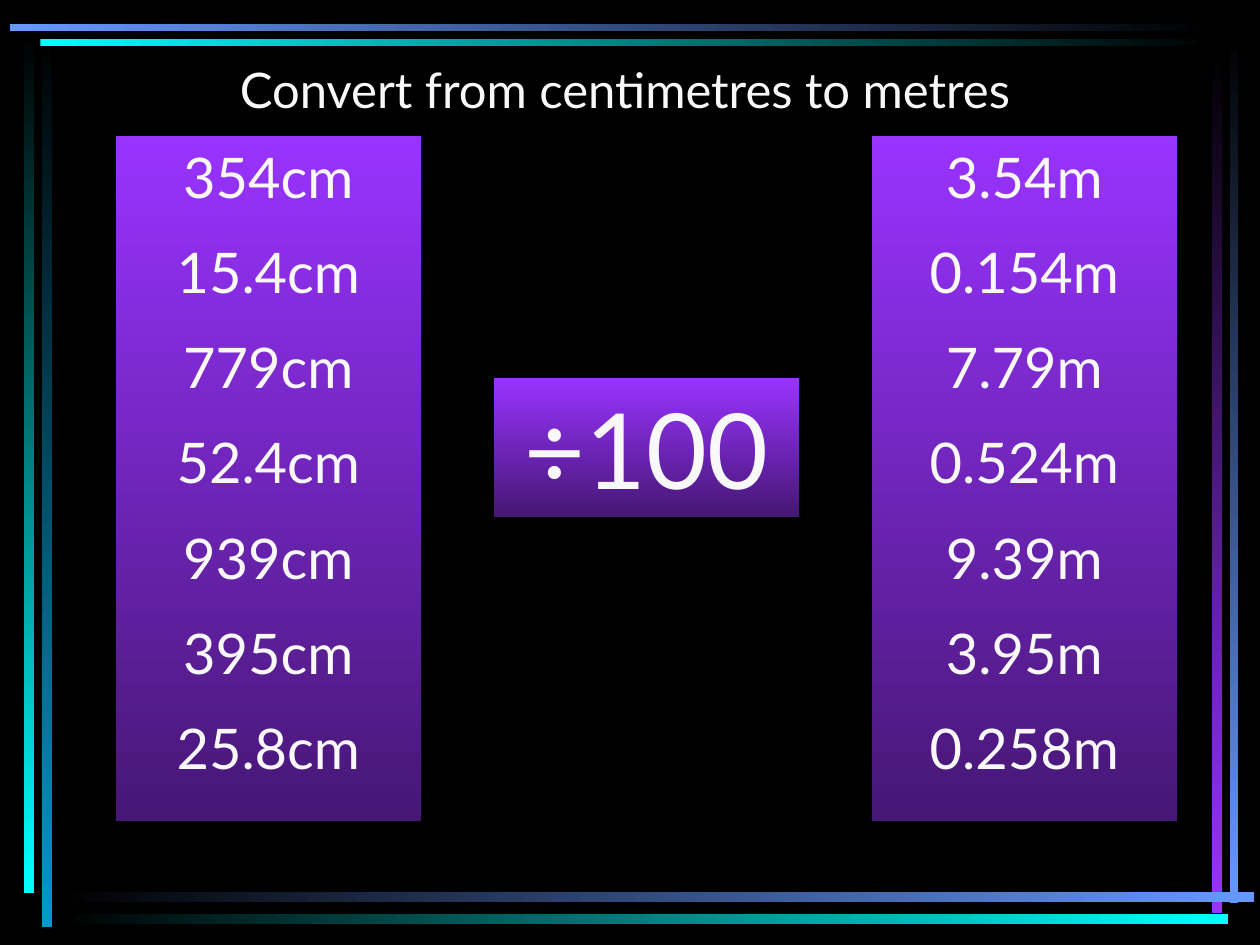
from pptx import Presentation
from pptx.dml.color import RGBColor
from pptx.enum.shapes import MSO_SHAPE
from pptx.enum.text import MSO_ANCHOR, PP_ALIGN
from pptx.util import Inches, Pt

RECT = MSO_SHAPE.RECTANGLE
TOP = MSO_ANCHOR.TOP
CENTER = PP_ALIGN.CENTER
ACROSS, DOWN = 0, 270
BLACK, CYAN, BLUE, TEAL = "000000", "00FFFF", "6699FF", "0099CC"
PURPLE, DEEP_PURPLE, WHITE = "9933FF", "461775", "F8F8F8"


def rgb(value):
    return RGBColor.from_string(value)


class Deck:
    font = "Lato"

    def __init__(self, prs):
        self.s = prs.slides.add_slide(prs.slide_layouts[6])

    def background(self, color):
        fill = self.s.background.fill
        fill.solid()
        fill.fore_color.rgb = rgb(color)

    def gradient(self, box, start, end, angle):
        sp = self.s.shapes.add_shape(RECT, *map(Inches, box))
        sp.shadow.inherit = False
        sp.line.fill.background()
        sp.fill.gradient()
        sp.fill.gradient_angle = angle
        for stop, position, color in zip(sp.fill.gradient_stops, (0, 1), (start, end)):
            stop.position = position
            stop.color.rgb = rgb(color)
        return sp

    def add_lines(self, sp, lines, size):
        tf = sp.text_frame
        tf.word_wrap = True
        tf.vertical_anchor = TOP
        for i, line in enumerate(lines):
            p = tf.paragraphs[0] if i == 0 else tf.add_paragraph()
            p.alignment = CENTER
            p.space_before = Pt(size / 2 if i else 0)
            r = p.add_run()
            r.text = line
            r.font.name = self.font
            r.font.size = Pt(size)
            r.font.color.rgb = rgb(WHITE)

    def panel(self, box, lines, size):
        self.add_lines(self.gradient(box, PURPLE, DEEP_PURPLE, DOWN), lines, size)

    def text(self, box, line, size):
        self.add_lines(self.s.shapes.add_textbox(*map(Inches, box)), [line], size)


def main():
    prs = Presentation()
    prs.slide_width, prs.slide_height = Inches(10), Inches(7.5)
    deck = Deck(prs)
    deck.background(BLACK)

    frame_bars = [
        ((0.33, 0.28, 0.08, 7.08), BLACK, TEAL, DOWN),
        ((0.19, 0.25, 0.08, 6.84), BLACK, CYAN, DOWN),
        ((9.76, 0.24, 0.07, 6.93), BLACK, BLUE, DOWN),
        ((9.62, 0.42, 0.08, 6.83), BLACK, PURPLE, DOWN),
        ((0.45, 7.08, 9.5, 0.08), BLACK, BLUE, ACROSS),
        ((0.45, 7.25, 9.3, 0.08), BLACK, CYAN, ACROSS),
        ((0.32, 0.31, 9.32, 0.06), CYAN, BLACK, ACROSS),
        ((0.08, 0.19, 9.56, 0.06), BLUE, BLACK, ACROSS),
    ]
    for bar in frame_bars:
        deck.gradient(*bar)

    centimetres = ["354cm", "15.4cm", "779cm", "52.4cm", "939cm", "395cm", "25.8cm"]
    metres = ["3.54m", "0.154m", "7.79m", "0.524m", "9.39m", "3.95m", "0.258m"]
    for left, values in ((0.92, centimetres), (6.92, metres)):
        deck.panel((left, 1.08, 2.42, 5.44), values, 32)
    deck.panel((3.92, 3, 2.42, 1.1), ["÷100"], 60)
    deck.text((0.75, 0.42, 8.42, 0.57), "Convert from centimetres to metres", 28)

    prs.save("out.pptx")


if __name__ == "__main__":
    main()
